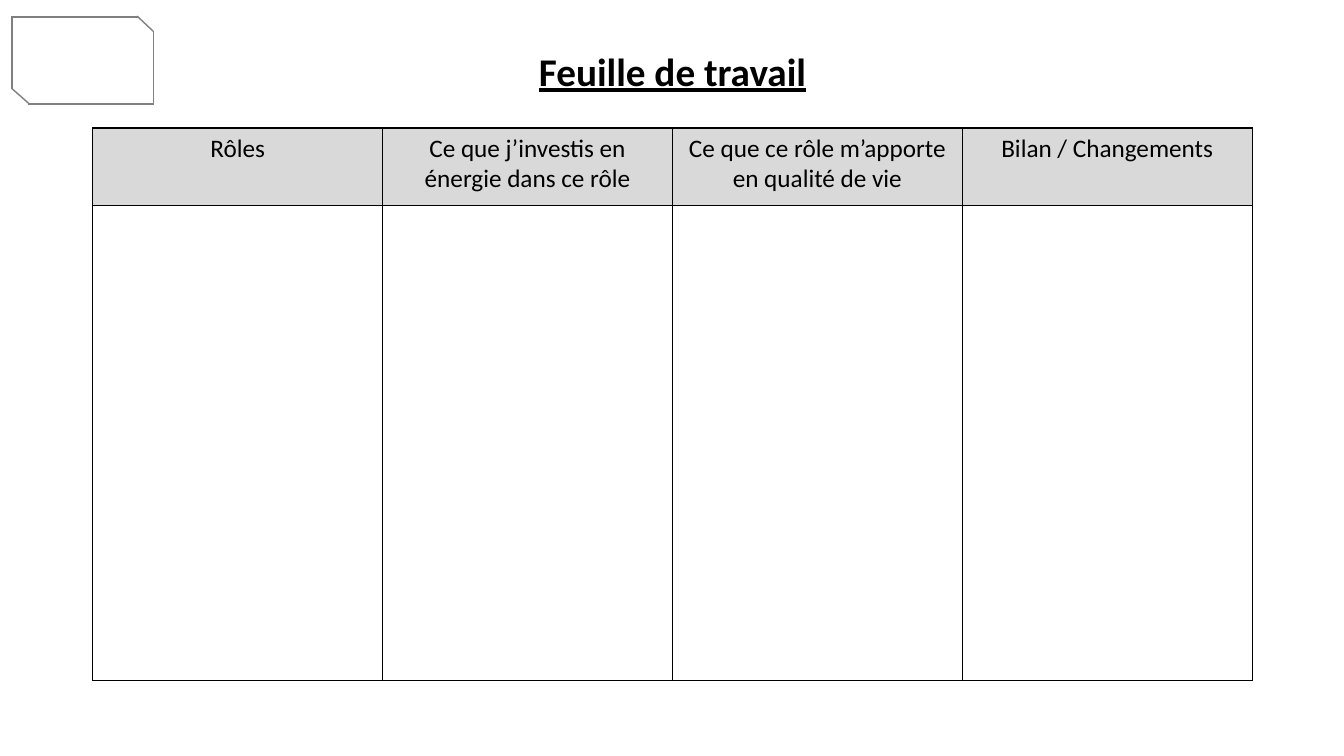
from dataclasses import dataclass

import pptx
import pptx.dml.color
import pptx.enum.shapes
import pptx.enum.text
import pptx.oxml
import pptx.oxml.ns
import pptx.util
from pptx.util import Inches

FONT = "Calibri"
BLACK, GREY, HEADER_FILL = "000000", "808080", "D9D9D9"
LEFT, WIDTH = 0.92, 11.5
HEADERS = [
    "Rôles",
    "Ce que j’investis en énergie dans ce rôle",
    "Ce que ce rôle m’apporte en qualité de vie",
    "Bilan / Changements",
]
ROW_HEIGHTS = [0.77, 4.71]


@dataclass
class Edge:
    x1: float
    y1: float
    x2: float
    y2: float


CORNER_FRAME = [
    Edge(0.12, 0.17, 1.37, 0.17),
    Edge(0.28, 1.03, 1.52, 1.03),
    Edge(0.12, 0.16, 0.12, 0.88),
    Edge(1.52, 0.31, 1.52, 1.04),
    Edge(1.36, 0.16, 1.52, 0.31),
    Edge(0.12, 0.88, 0.29, 1.03),
]


def rgb(value: str) -> pptx.dml.color.RGBColor:
    return pptx.dml.color.RGBColor.from_string(value)


def format_paragraph(p, size: float) -> None:
    p.alignment = pptx.enum.text.PP_ALIGN.CENTER
    for r in p.runs:
        r.font.name = FONT
        r.font.size = pptx.util.Pt(size)
        r.font.color.rgb = rgb(BLACK)


def draw_edge(s, edge: Edge) -> None:
    line = s.shapes.add_connector(
        pptx.enum.shapes.MSO_CONNECTOR.STRAIGHT,
        Inches(edge.x1), Inches(edge.y1), Inches(edge.x2), Inches(edge.y2))
    line.line.color.rgb = rgb(GREY)
    line.line.width = pptx.util.Pt(1)
    spPr = line._element.spPr
    spPr.append(spPr.makeelement(pptx.oxml.ns.qn("a:effectLst"), {}))


def set_title(s, text: str) -> None:
    title = s.shapes.title
    title.left, title.top = Inches(LEFT), Inches(0.4)
    title.width, title.height = Inches(WIDTH), Inches(0.66)
    tf = title.text_frame
    tf.text = text
    tf.vertical_anchor = pptx.enum.text.MSO_ANCHOR.MIDDLE
    p = tf.paragraphs[0]
    p.line_spacing = 0.9
    format_paragraph(p, 28)
    p.runs[0].font.bold = True
    p.runs[0].font.underline = True


def set_borders(cell) -> None:
    """Give the cell a thin black line on all four sides."""
    tcPr = cell._tc.get_or_add_tcPr()
    for i, side in enumerate(("lnL", "lnR", "lnT", "lnB")):
        tcPr.insert(i, pptx.oxml.parse_xml(
            f'<a:{side} {pptx.oxml.ns.nsdecls("a")} w="{pptx.util.Pt(1)}">'
            f'<a:solidFill><a:srgbClr val="{BLACK}"/></a:solidFill></a:{side}>'))


def add_worksheet(s) -> None:
    table = s.shapes.add_table(
        len(ROW_HEIGHTS), len(HEADERS), Inches(LEFT), Inches(1.27),
        Inches(WIDTH), Inches(sum(ROW_HEIGHTS))).table
    table.first_row = False
    table.horz_banding = False
    for row, height in zip(table.rows, ROW_HEIGHTS):
        row.height = Inches(height)
    for cell in table.iter_cells():
        cell.fill.background()
        set_borders(cell)
    for cell, header in zip(table.rows[0].cells, HEADERS):
        cell.fill.solid()
        cell.fill.fore_color.rgb = rgb(HEADER_FILL)
        cell.text_frame.text = header
        format_paragraph(cell.text_frame.paragraphs[0], 18)


def main() -> None:
    prs = pptx.Presentation()
    prs.slide_width, prs.slide_height = Inches(13.33), Inches(7.5)
    s = prs.slides.add_slide(prs.slide_layouts.get_by_name("Title Only"))
    for edge in CORNER_FRAME:
        draw_edge(s, edge)
    set_title(s, "Feuille de travail")
    add_worksheet(s)
    prs.save("out.pptx")


if __name__ == "__main__":
    main()
